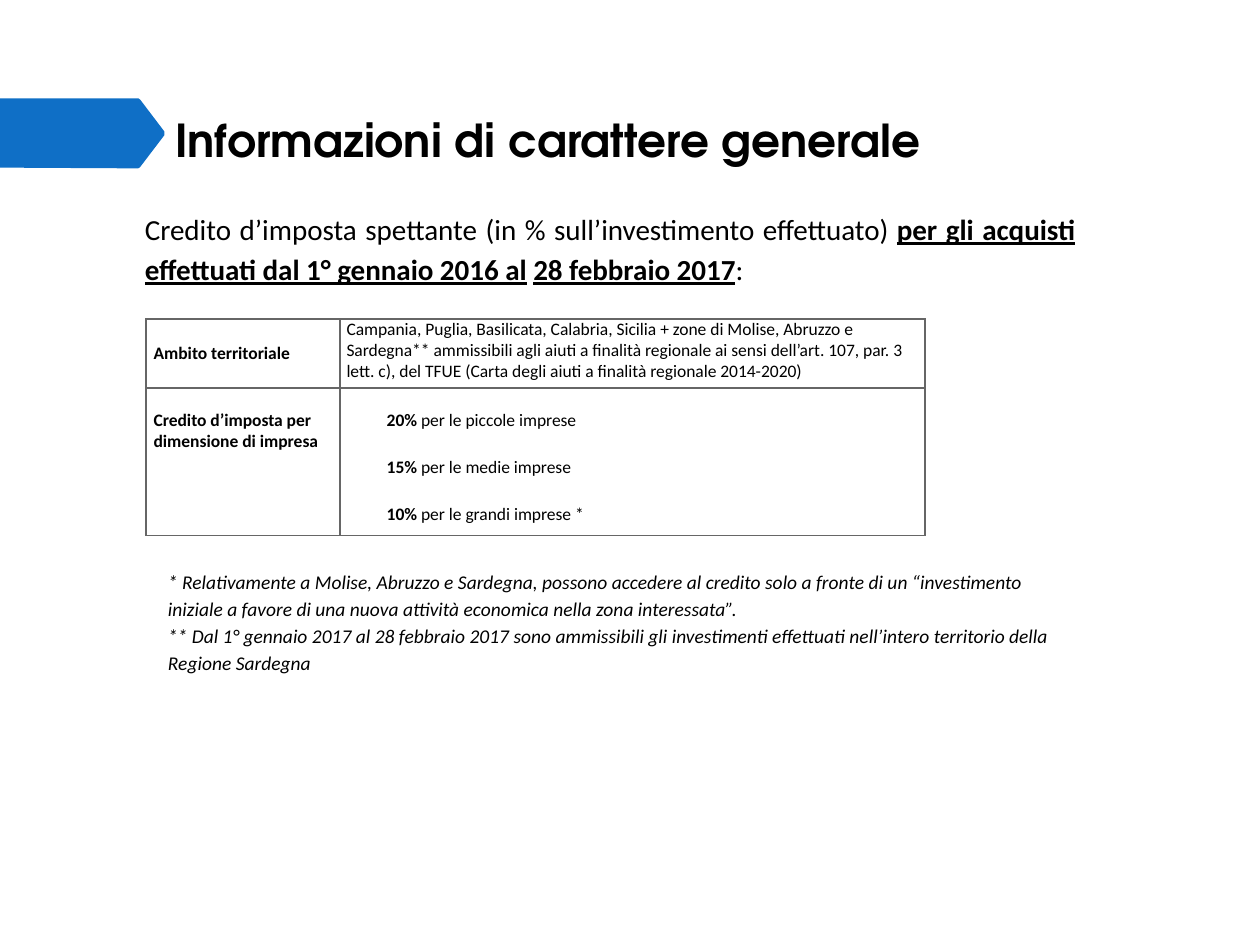
from lxml import etree
from pptx import Presentation
from pptx.dml.color import RGBColor
from pptx.enum.text import MSO_ANCHOR, PP_ALIGN
from pptx.oxml.ns import qn
from pptx.util import Pt

JUSTIFY, LEFT = PP_ALIGN.JUSTIFY, PP_ALIGN.LEFT
TOP, MIDDLE = MSO_ANCHOR.TOP, MSO_ANCHOR.MIDDLE

COLORS = {"arrow": "0F6FC6", "text": "000000", "border": "666666"}
TITLE_FONT, BODY_FONT = "TeX Gyre Adventor", "Calibri"

TITLE = [[("Informazioni di carattere generale", "b")]]
INTRO = [[
    ("Credito d’imposta spettante (in % sull’investimento effettuato) ", ""),
    ("per gli acquisti effettuati dal 1° gennaio 2016 al", "bu"),
    (" ", "b"),
    ("28 febbraio 2017", "bu"),
    (":", ""),
]]
NOTES = [
    [("* Relativamente a Molise, Abruzzo e Sardegna, possono accedere al credito solo a fronte "
      "di un “investimento iniziale a favore di una nuova attività economica nella zona "
      "interessata”.", "i")],
    [("** Dal 1° gennaio 2017 al 28 febbraio 2017 sono ammissibili gli investimenti effettuati "
      "nell’intero territorio della Regione Sardegna", "i")],
]
SCOPE = ("Campania, Puglia, Basilicata, Calabria, Sicilia + zone di Molise, Abruzzo e Sardegna** "
         "ammissibili agli aiuti a finalità regionale ai sensi dell’art. 107, par. 3 lett. c), "
         "del TFUE (Carta degli aiuti a finalità regionale 2014-2020)")
RATES = [("20% ", "per le piccole imprese"),
         ("15% ", "per le medie imprese"),
         ("10% ", "per le grandi imprese *")]

# paragraphs, left margin, top margin, anchor, gap between paragraphs
CELLS = [
    [([[("Ambito territoriale", "b")]], 4.3, 0, MIDDLE, 0),
     ([[(SCOPE, "")]], 3.6, 0, TOP, 0)],
    [([[("Credito d’imposta per dimensione di impresa", "b")]], 4.3, 12.5, TOP, 0),
     ([[(rate, "b"), (size, "")] for rate, size in RATES], 26.6, 12.5, TOP, 14.8)],
]
COLUMNS, ROWS = [110.9, 334.1], [39.6, 84.2]
TABLE_LEFT, TABLE_TOP = 83.5, 182.2
ARROW = [(0, 56.2), (79.2, 56.2), (80.2, 57), (94, 75.2), (94, 77.2),
         (80, 95.6), (79, 96.2), (0, 95.8)]


def write(tf, paragraphs, size, font=BODY_FONT, align=LEFT, spacing=1.0, gap=0):
    tf.word_wrap = True
    for i, runs in enumerate(paragraphs):
        p = tf.add_paragraph() if i else tf.paragraphs[0]
        p.alignment, p.line_spacing = align, spacing
        p.space_before = Pt(gap if i else 0)
        for text, style in runs:
            r = p.add_run()
            r.text = text
            r.font.name, r.font.size = font, Pt(size)
            r.font.bold, r.font.italic = "b" in style, "i" in style
            r.font.underline = "u" in style
            r.font.color.rgb = RGBColor.from_string(COLORS["text"])


def add_text(s, box, paragraphs, size, **style):
    tf = s.shapes.add_textbox(*map(Pt, box)).text_frame
    tf.margin_left = tf.margin_right = tf.margin_top = tf.margin_bottom = 0
    write(tf, paragraphs, size, **style)


def add_arrow(s):
    start, *rest = [(Pt(x), Pt(y)) for x, y in ARROW]
    builder = s.shapes.build_freeform(*start)
    builder.add_line_segments(rest, close=True)
    sp = builder.convert_to_shape()
    sp.shadow.inherit = False
    sp.fill.solid()
    sp.fill.fore_color.rgb = RGBColor.from_string(COLORS["arrow"])
    sp.line.fill.background()


def set_borders(cell):
    tc_pr = cell._tc.get_or_add_tcPr()
    for i, side in enumerate("LRTB"):
        line = etree.Element(qn(f"a:ln{side}"), w=str(Pt(1)))
        fill = etree.SubElement(line, qn("a:solidFill"))
        etree.SubElement(fill, qn("a:srgbClr"), val=COLORS["border"])
        tc_pr.insert(i, line)


def add_credit_table(s):
    table = s.shapes.add_table(len(ROWS), len(COLUMNS), Pt(TABLE_LEFT), Pt(TABLE_TOP),
                               Pt(sum(COLUMNS)), Pt(sum(ROWS))).table
    table.first_row = table.horz_banding = False
    for column, width in zip(table.columns, COLUMNS):
        column.width = Pt(width)
    for row, height in zip(table.rows, ROWS):
        row.height = Pt(height)
    for i, cells in enumerate(CELLS):
        for j, (paragraphs, left, top, anchor, gap) in enumerate(cells):
            cell = table.cell(i, j)
            cell.margin_left, cell.margin_top = Pt(left), Pt(top)
            cell.margin_right = cell.margin_bottom = 0
            cell.vertical_anchor = anchor
            cell.fill.background()
            set_borders(cell)
            write(cell.text_frame, paragraphs, 10, gap=gap)


def main():
    prs = Presentation()
    prs.slide_width, prs.slide_height = Pt(720), Pt(540)
    s = prs.slides.add_slide(prs.slide_layouts[6])
    add_arrow(s)
    add_text(s, (100, 64, 574, 36), TITLE, 25.9, font=TITLE_FONT)
    add_text(s, (82.8, 118, 531.6, 48), INTRO, 16.6, align=JUSTIFY, spacing=1.15)
    add_credit_table(s)
    add_text(s, (96, 324, 518.4, 64), NOTES, 11.1, spacing=1.15)
    prs.save("out.pptx")


if __name__ == "__main__":
    main()
